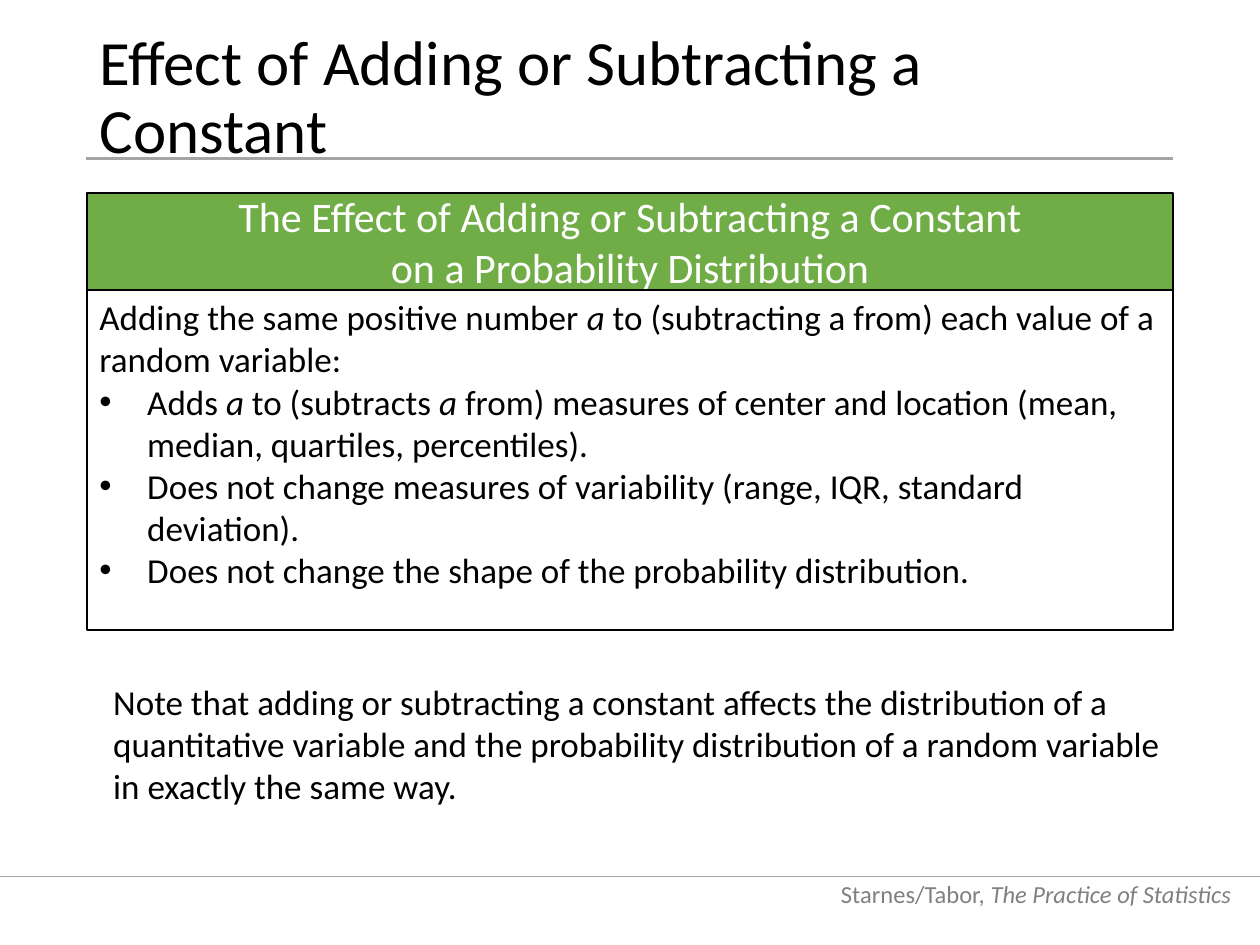
"""Build the slide on adding or subtracting a constant."""
from dataclasses import dataclass

from lxml.etree import SubElement
from pptx import Presentation
from pptx.dml.color import RGBColor
from pptx.enum.shapes import MSO_CONNECTOR, MSO_SHAPE
from pptx.enum.text import MSO_ANCHOR, PP_ALIGN
from pptx.oxml.ns import qn
from pptx.util import Inches, Pt

FONT = "Calibri"
BLACK, WHITE, GREEN = "000000", "FFFFFF", "70AD47"
RULE, GREY = "A5A5A5", "808080"
LEFT, WIDTH = 0.69, 8.62
BULLET = "• "


@dataclass
class Box:
    top: float
    height: float
    left: float = LEFT
    width: float = WIDTH

    def spot(self) -> list:
        return [Inches(n) for n in (self.left, self.top, self.width, self.height)]


@dataclass
class Style:
    size: int
    color: str = BLACK
    align: PP_ALIGN = PP_ALIGN.LEFT
    anchor: MSO_ANCHOR = MSO_ANCHOR.TOP


@dataclass
class Panel:
    box: Box
    fill: str | None
    border: float
    lines: list
    style: Style


@dataclass
class Rule:
    start: float
    end: float
    top: float
    weight: float


def paint(target, color: str) -> None:
    """Set a solid colour on a fill."""
    target.solid()
    target.fore_color.rgb = RGBColor.from_string(color)


def indent(para) -> None:
    """Give a paragraph a hanging bullet."""
    props = para._p.get_or_add_pPr()
    props.set("marL", str(Inches(0.38)))
    props.set("indent", str(-Inches(0.38)))
    SubElement(props, qn("a:buFont"), typeface="Arial")
    SubElement(props, qn("a:buChar"), char=BULLET.strip())


def write(frame, lines: list, style: Style) -> None:
    """Write paragraphs, with italics between asterisks."""
    frame.word_wrap = True
    frame.vertical_anchor = style.anchor
    for num, line in enumerate(lines):
        para = frame.add_paragraph() if num else frame.paragraphs[0]
        if line.startswith(BULLET):
            indent(para)
        first, *rest = line.removeprefix(BULLET).split("*")
        para.text = first
        for count, part in enumerate(rest):
            if part:
                run = para.add_run()
                run.text = part
                run.font.italic = count % 2 == 0
        para.alignment = style.align
        for run in para.runs:
            run.font.name = FONT
            run.font.size = Pt(style.size)
            paint(run.font.fill, style.color)


def add_text(slide, box: Box, lines: list, style: Style) -> None:
    """Add a text box."""
    write(slide.shapes.add_textbox(*box.spot()).text_frame, lines, style)


def add_rule(slide, rule: Rule) -> None:
    """Add a level grey line."""
    top = Inches(rule.top)
    line = slide.shapes.add_connector(
        MSO_CONNECTOR.STRAIGHT, Inches(rule.start), top, Inches(rule.end), top)
    paint(line.line.fill, RULE)
    line.line.width = Pt(rule.weight)
    SubElement(line._element.spPr, qn("a:effectLst"))


def add_panel(group, panel: Panel) -> None:
    """Add a bordered box to the group."""
    shape = group.shapes.add_shape(MSO_SHAPE.RECTANGLE, *panel.box.spot())
    shape.shadow.inherit = False
    if panel.fill:
        paint(shape.fill, panel.fill)
    else:
        shape.fill.background()
    paint(shape.line.fill, BLACK)
    shape.line.width = Pt(panel.border)
    write(shape.text_frame, panel.lines, panel.style)


def add_title(slide) -> None:
    """Place and fill the title."""
    title = slide.shapes.title
    title.left, title.top, title.width, title.height = Box(0.4, 0.78).spot()
    write(title.text_frame, ["Effect of Adding or Subtracting a Constant"],
          Style(36, anchor=MSO_ANCHOR.MIDDLE))
    title.text_frame.paragraphs[0].line_spacing = 0.9


RULES = [Rule(0, 10, 6.96, 0.5), Rule(0.68, 9.31, 1.26, 1.5)]
PANELS = [
    Panel(Box(1.53, 0.77), GREEN, 1,
          ["The Effect of Adding or Subtracting a Constant\n"
           "on a Probability Distribution"],
          Style(24, WHITE, PP_ALIGN.CENTER, MSO_ANCHOR.MIDDLE)),
    Panel(Box(2.3, 2.7), None, 0.75,
          ["Adding the same positive number *a* to (subtracting a from) "
           "each value of a",
           "random variable:",
           "• Adds *a* to (subtracts *a* from) measures of center and "
           "location (mean, median, quartiles, percentiles).",
           "• Does not change measures of variability (range, IQR, "
           "standard deviation).",
           "• Does not change the shape of the probability distribution."],
          Style(20)),
]
NOTE = ("Note that adding or subtracting a constant affects the distribution "
        "of a quantitative variable and the probability distribution of a "
        "random variable in exactly the same way.")


def main() -> None:
    """Build and save the slide."""
    deck = Presentation()
    deck.slide_width, deck.slide_height = Inches(10), Inches(7.5)
    slide = deck.slides.add_slide(deck.slide_layouts[5])
    add_text(slide, Box(6.86, 0.4, 6.47, 3.4),
             ["Starnes/Tabor,* The Practice of Statistics*"],
             Style(14, GREY, PP_ALIGN.RIGHT, MSO_ANCHOR.BOTTOM))
    for rule in RULES:
        add_rule(slide, rule)
    add_title(slide)
    group = slide.shapes.add_group_shape()
    for panel in PANELS:
        add_panel(group, panel)
    add_text(slide, Box(5.35, 1.11, 0.8, 8.51), [NOTE], Style(20))
    deck.save("out.pptx")


if __name__ == "__main__":
    main()
